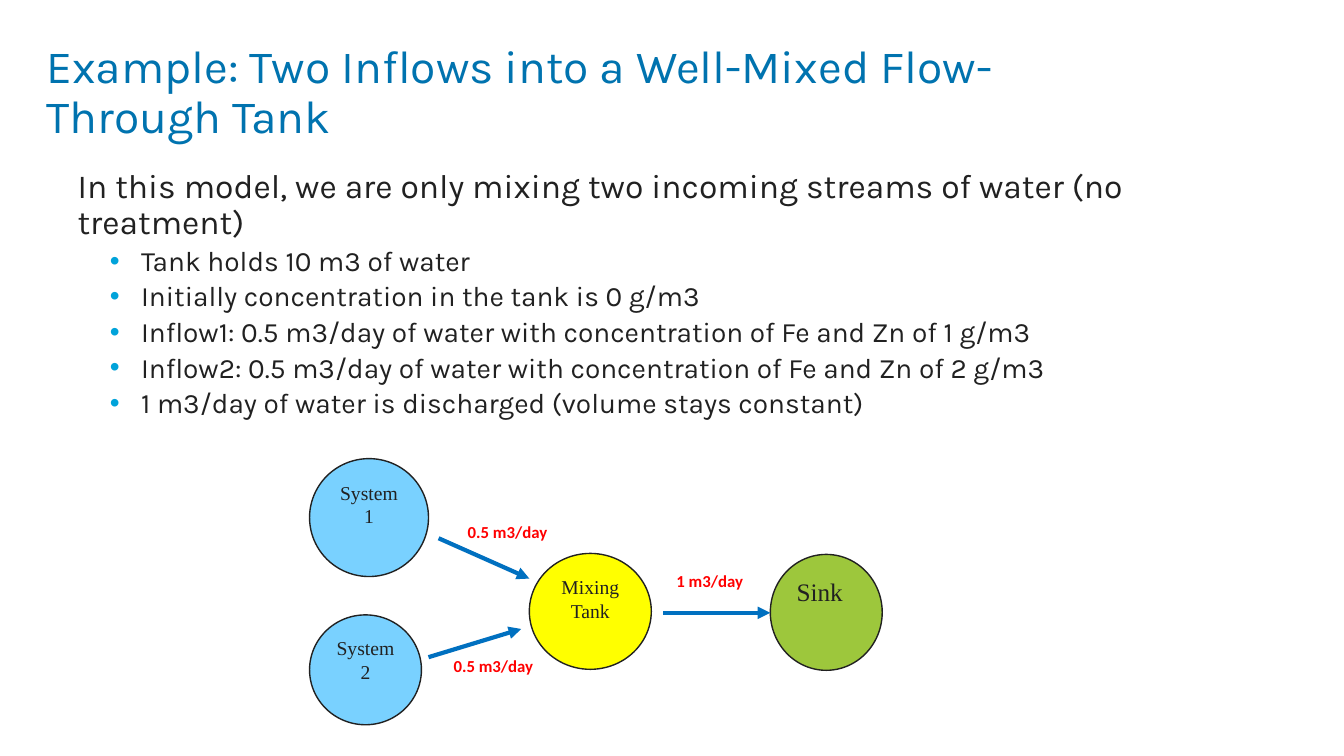
from lxml.etree import SubElement
from pptx import Presentation
from pptx.dml.color import RGBColor
from pptx.enum.shapes import MSO_CONNECTOR as Connector, MSO_SHAPE as Shape
from pptx.enum.text import MSO_ANCHOR as Anchor, PP_ALIGN as Align
from pptx.oxml.ns import qn
from pptx.util import Emu, Pt

PX = 9144  # 100 px to the inch

TITLE_BLUE = RGBColor(0x00, 0x73, 0xAF)
INK = RGBColor(0x21, 0x21, 0x21)
BULLET_BLUE = "00A3DA"
SYSTEM_BLUE = RGBColor(0x79, 0xD1, 0xFF)
TANK_YELLOW = RGBColor(0xFF, 0xFF, 0x00)
SINK_GREEN = RGBColor(0x9D, 0xC7, 0x3C)
ARROW_BLUE = RGBColor(0x00, 0x70, 0xC0)
FLOW_RED = RGBColor(0xFF, 0x00, 0x00)

HEADING = "Example: Two Inflows into a Well-Mixed Flow-Through Tank"
INTRO = "In this model, we are only mixing two incoming streams of water (no treatment)"
FACTS = [
    "Tank holds 10 m3 of water",
    "Initially concentration in the tank is 0 g/m3",
    "Inflow1: 0.5 m3/day of water with concentration of Fe and Zn of 1 g/m3",
    "Inflow2: 0.5 m3/day of water with concentration of Fe and Zn of 2 g/m3",
    "1 m3/day of water is discharged (volume stays constant)",
]
# text, left, top, width, height, fill, size, alignment
NODES = [
    ("System 2", 307, 610, 111, 109, SYSTEM_BLUE, 14, Align.CENTER),
    ("Mixing Tank", 525, 549, 121, 115, TANK_YELLOW, 14, Align.CENTER),
    ("Sink", 764, 550, 111, 115, SINK_GREEN, 18, Align.LEFT),
    ("System 1", 307, 455, 118, 117, SYSTEM_BLUE, 14, Align.CENTER),
]
ARROWS = [(425, 652, 517, 624), (658, 608, 764, 608), (435, 534, 525, 574)]
FLOWS = [("1 m3/day", 661, 551), ("0.5 m3/day", 454, 503), ("0.5 m3/day", 440, 636)]


def px(*lengths):
    return [Emu(length * PX) for length in lengths]


class FlowSlide:
    body_font, node_font, flow_font = "Karla", "Times New Roman", "Calibri"

    def __init__(self, deck):
        self.page = deck.slides.add_slide(deck.slide_layouts[5])
        self.diagram = None

    def style(self, para, name, size, color, bold=False):
        font = para.font
        font.name, font.size, font.bold = name, Pt(size), bold
        font.color.rgb = color

    def frame(self, box, top=0):
        frame = box.text_frame
        frame.word_wrap = True
        frame.margin_left = frame.margin_right = frame.margin_bottom = 0
        frame.margin_top, = px(top)
        frame.vertical_anchor = Anchor.TOP
        return frame

    def title(self, text):
        box = self.page.shapes.title
        box.left, box.top, box.width, box.height = px(46, 22, 1106, 92)
        frame = self.frame(box, top=21)
        frame.text = text
        para = frame.paragraphs[0]
        para.alignment, para.line_spacing = Align.LEFT, 0.9
        self.style(para, self.body_font, 33, TITLE_BLUE)

    def body(self, intro, facts):
        box = self.page.shapes.add_textbox(*px(77, 168, 1090, 291))
        frame = self.frame(box)
        para = frame.paragraphs[0]
        para.text, para.line_spacing = intro, 0.9
        self.style(para, self.body_font, 24, INK)
        for fact in facts:
            para = frame.add_paragraph()
            para.text, para.level = fact, 1
            para.line_spacing, para.space_before = 0.9, Pt(3.8)
            self.bullet(para)
            self.style(para, self.body_font, 20, INK)

    def bullet(self, para):
        props = para._p.get_or_add_pPr()
        props.set("marL", str(63 * PX))
        props.set("indent", str(-31 * PX))
        color = SubElement(props, qn("a:buClr"))
        SubElement(color, qn("a:srgbClr"), val=BULLET_BLUE)
        SubElement(props, qn("a:buFont"), typeface="Arial")
        SubElement(props, qn("a:buChar"), char="•")

    def start_diagram(self):
        self.diagram = self.page.shapes.add_group_shape().shapes

    def node(self, text, left, top, width, height, fill, size, alignment):
        circle = self.diagram.add_shape(Shape.OVAL, *px(left, top, width, height))
        circle.shadow.inherit = False
        circle.fill.solid()
        circle.fill.fore_color.rgb = fill
        circle.line.color.rgb, circle.line.width = INK, Pt(1)
        frame = circle.text_frame
        frame.word_wrap, frame.vertical_anchor = True, Anchor.TOP
        para = frame.paragraphs[0]
        para.text, para.alignment = text, alignment
        self.style(para, self.node_font, size, INK)

    def arrow(self, *ends):
        arrow = self.diagram.add_connector(Connector.STRAIGHT, *px(*ends))
        arrow.line.color.rgb, arrow.line.width = ARROW_BLUE, Pt(3)
        SubElement(arrow.line._get_or_add_ln(), qn("a:tailEnd"), type="triangle")
        SubElement(arrow._element.spPr, qn("a:effectLst"))

    def flow(self, text, left, top):
        box = self.diagram.add_textbox(*px(left, top, 111, 50))
        frame = box.text_frame
        frame.word_wrap, frame.vertical_anchor = True, Anchor.MIDDLE
        para = frame.paragraphs[0]
        para.text = text
        self.style(para, self.flow_font, 12, FLOW_RED, bold=True)


def main():
    deck = Presentation()
    deck.slide_width, deck.slide_height = px(1333, 750)
    slide = FlowSlide(deck)
    slide.title(HEADING)
    slide.body(INTRO, FACTS)
    slide.start_diagram()
    for node in NODES:
        slide.node(*node)
    for arrow in ARROWS:
        slide.arrow(*arrow)
    for flow in FLOWS:
        slide.flow(*flow)
    deck.save("out.pptx")


if __name__ == "__main__":
    main()
